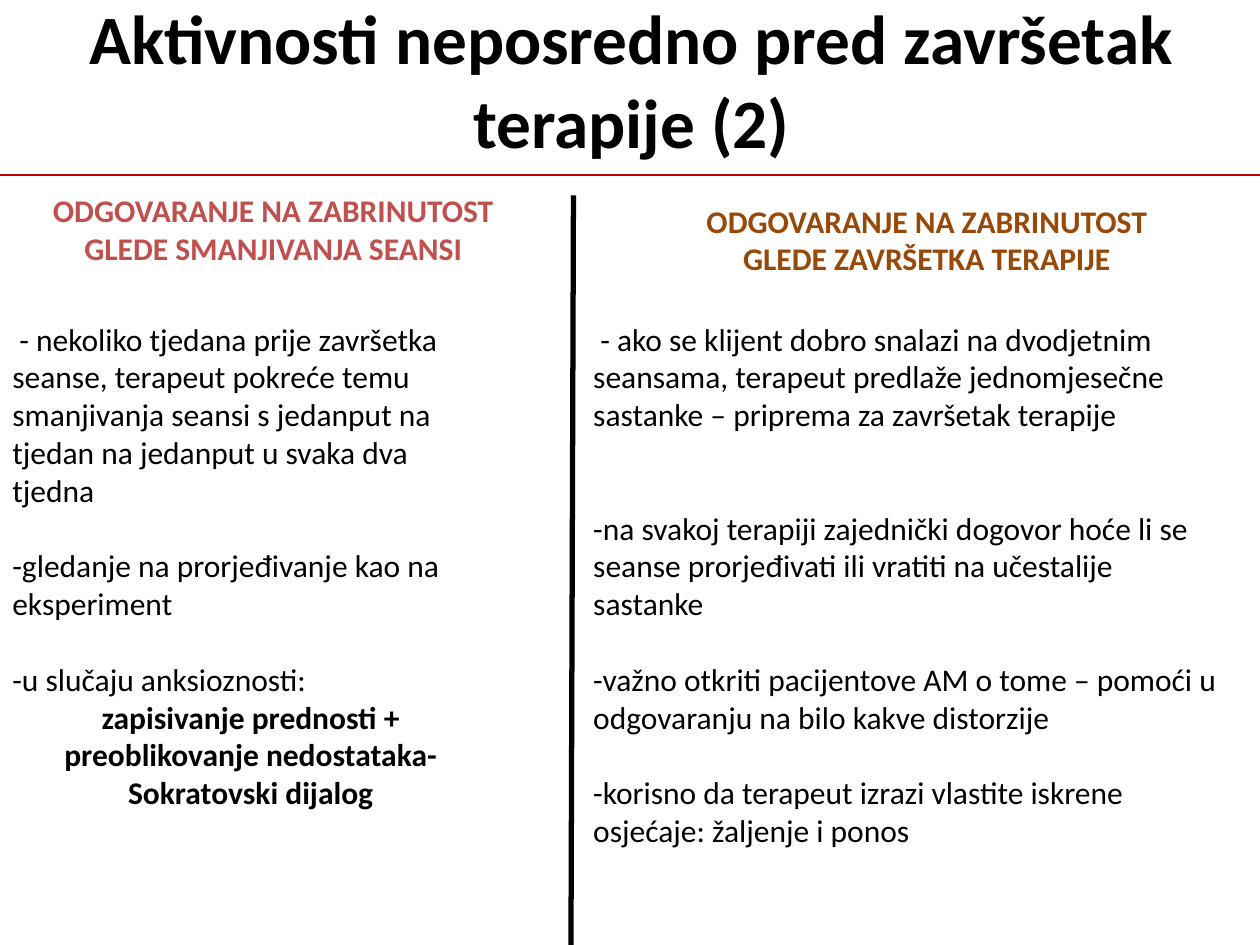
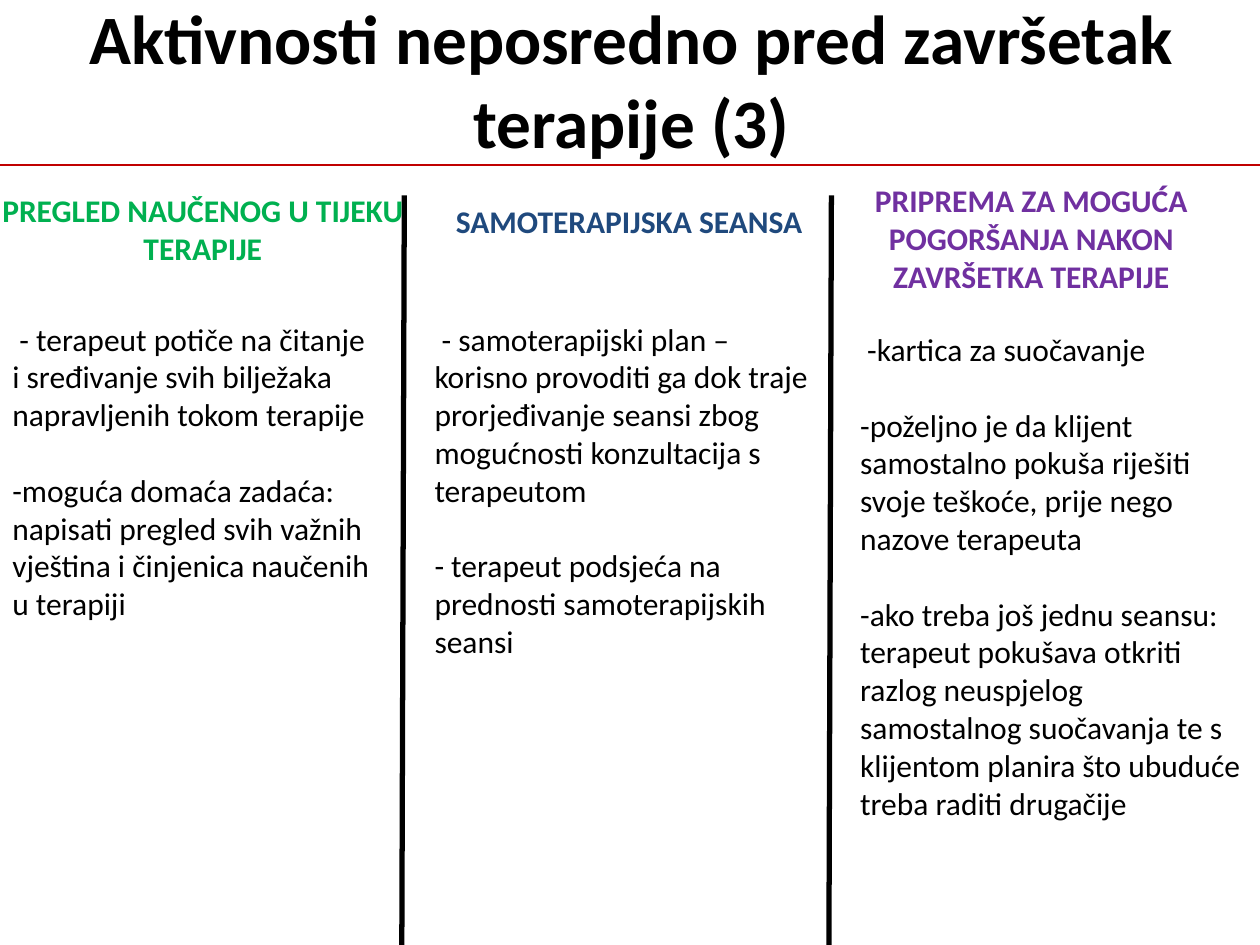
from dataclasses import dataclass

from lxml.etree import SubElement
from pptx import Presentation
from pptx.dml.color import RGBColor as Rgb
from pptx.enum.shapes import MSO_CONNECTOR as Connector
from pptx.enum.text import MSO_ANCHOR as Anchor, PP_ALIGN as Align
from pptx.oxml.ns import qn
from pptx.util import Cm, Pt


@dataclass(frozen=True)
class Theme:
    font: str = "Calibri"
    ink: str = "000000"
    rule: str = "C00000"
    red: str = "C0504D"
    brown: str = "984807"
    green: str = "00B050"
    blue: str = "1F497D"
    purple: str = "7030A0"
    title_size: float = 39.6
    text_size: float = 18
    blank_line: float = 21.6
    rule_width: float = 1.25
    divider_width: float = 3


@dataclass(frozen=True)
class Box:
    left: float
    top: float
    width: float
    height: float

    def lengths(self):
        return [Cm(n) for n in (self.left, self.top, self.width, self.height)]


@dataclass(frozen=True)
class Item:
    text: str
    blank_lines: int = 1
    bold: bool = False
    align: Align = Align.LEFT


@dataclass(frozen=True)
class Heading:
    text: str
    color: str
    shift: float
    rise: float
    width: float
    lines: int = 2


THEME = Theme()
PAGE = Box(0, 0, 25.4, 19.05)
TITLE = Box(1.3, 0, 22.86, 3.18)
DIVIDER_TOP = 3.94
DIVIDER_LEAN = 0.05
TITLE_TEXT = "Aktivnosti neposredno pred završetak terapije ({})"


def set_formats(target, formats):
    for name, value in formats.items():
        setattr(target, name, value)


def add_text(page, box, items, size=THEME.text_size, color=THEME.ink, anchor=Anchor.TOP):
    frame = page.shapes.add_textbox(*box.lengths()).text_frame
    set_formats(frame, {"word_wrap": True, "vertical_anchor": anchor})
    for index, item in enumerate(items):
        para = frame.add_paragraph() if index else frame.paragraphs[0]
        gap = item.blank_lines * THEME.blank_line if index else 0
        set_formats(para, {"alignment": item.align, "space_before": Pt(gap)})
        span = para.add_run()
        span.text = item.text
        set_formats(span.font, {"name": THEME.font, "size": Pt(size), "bold": item.bold})
        span.font.color.rgb = Rgb.from_string(color)


def add_line(page, start, end, color, width):
    points = [Cm(n) for n in (*start, *end)]
    line = page.shapes.add_connector(Connector.STRAIGHT, *points)
    line.line.color.rgb = Rgb.from_string(color)
    line.line.width = Pt(width)
    SubElement(line._element.spPr, qn("a:effectLst"))


def add_header(page, number, rule_top):
    title = Item(TITLE_TEXT.format(number), bold=True, align=Align.CENTER)
    add_text(page, TITLE, [title], THEME.title_size, anchor=Anchor.MIDDLE)
    add_line(page, (0, rule_top), (PAGE.width, rule_top), THEME.rule, THEME.rule_width)


def add_divider(page, left):
    end = (left - DIVIDER_LEAN, PAGE.height)
    add_line(page, (left, DIVIDER_TOP), end, THEME.ink, THEME.divider_width)


def add_column(page, box, heading, items):
    heading_box = Box(box.left + heading.shift, box.top - heading.rise,
                      heading.width, 0.25 + 0.77 * heading.lines)
    label = Item(heading.text, bold=True, align=Align.CENTER)
    add_text(page, heading_box, [label], color=heading.color)
    add_text(page, box, items)


def add_column_slide(deck, number, rule_top, dividers, columns):
    page = deck.slides.add_slide(deck.slide_layouts[6])
    add_header(page, number, rule_top)
    for left in dividers:
        add_divider(page, left)
    for column in columns:
        add_column(page, *column)


CONCERNS = [
    (
        Box(0, 6.32, 10.11, 10.26),
        Heading("ODGOVARANJE NA ZABRINUTOST GLEDE SMANJIVANJA SEANSI", THEME.red, 0.71, 2.59, 9.6),
        [
            Item(" - nekoliko tjedana prije završetka seanse, terapeut pokreće temu smanjivanja "
                 "seansi s jedanput na tjedan na jedanput u svaka dva tjedna"),
            Item("-gledanje na prorjeđivanje kao na eksperiment"),
            Item("-u slučaju anksioznosti:"),
            Item("zapisivanje prednosti + preoblikovanje nedostataka- Sokratovski dijalog",
                 blank_lines=0, bold=True, align=Align.CENTER),
        ],
    ),
    (
        Box(11.71, 6.32, 13.11, 11.02),
        Heading("ODGOVARANJE NA ZABRINUTOST GLEDE ZAVRŠETKA TERAPIJE", THEME.brown, 1.78, 2.38, 10.39),
        [
            Item(" - ako se klijent dobro snalazi na dvodjetnim seansama, terapeut predlaže "
                 "jednomjesečne sastanke – priprema za završetak terapije"),
            Item("-na svakoj terapiji zajednički dogovor hoće li se seanse prorjeđivati "
                 "ili vratiti na učestalije sastanke", blank_lines=2),
            Item("-važno otkriti pacijentove AM o tome – pomoći u odgovaranju na bilo kakve distorzije"),
            Item("-korisno da terapeut izrazi vlastite iskrene osjećaje: žaljenje i ponos"),
        ],
    ),
]

PREPARATION = [
    (
        Box(0, 6.32, 7.9, 6.4),
        Heading("PREGLED NAUČENOG U TIJEKU TERAPIJE", THEME.green, -0.71, 2.59, 9.6),
        [
            Item(" - terapeut potiče na čitanje i sređivanje svih bilježaka napravljenih tokom terapije"),
            Item("-moguća domaća zadaća: napisati pregled svih važnih vještina i činjenica "
                 "naučenih u terapiji"),
        ],
    ),
    (
        Box(8.51, 6.32, 8.2, 7.19),
        Heading("SAMOTERAPIJSKA SEANSA", THEME.blue, -1.02, 2.38, 10.39, lines=1),
        [
            Item(" - samoterapijski plan – korisno provoditi ga dok traje prorjeđivanje seansi "
                 "zbog mogućnosti konzultacija s terapeutom"),
            Item("- terapeut podsjeća na prednosti samoterapijskih seansi"),
        ],
    ),
    (
        Box(17.09, 6.53, 8.31, 10.26),
        Heading("PRIPREMA ZA MOGUĆA POGORŠANJA NAKON ZAVRŠETKA TERAPIJE",
                THEME.purple, -0.2, 3, 7.8, lines=3),
        [
            Item(" -kartica za suočavanje"),
            Item("-poželjno je da klijent samostalno pokuša riješiti svoje teškoće, "
                 "prije nego nazove terapeuta"),
            Item("-ako treba još jednu seansu: terapeut pokušava otkriti razlog neuspjelog "
                 "samostalnog suočavanja te s klijentom planira što ubuduće treba raditi drugačije"),
        ],
    ),
]


def main():
    deck = Presentation()
    set_formats(deck, {"slide_width": Cm(PAGE.width), "slide_height": Cm(PAGE.height)})
    add_column_slide(deck, 2, 3.53, [11.56], CONCERNS)
    add_column_slide(deck, 3, 3.33, [8.15, 16.76], PREPARATION)
    deck.save("out.pptx")


if __name__ == "__main__":
    main()
